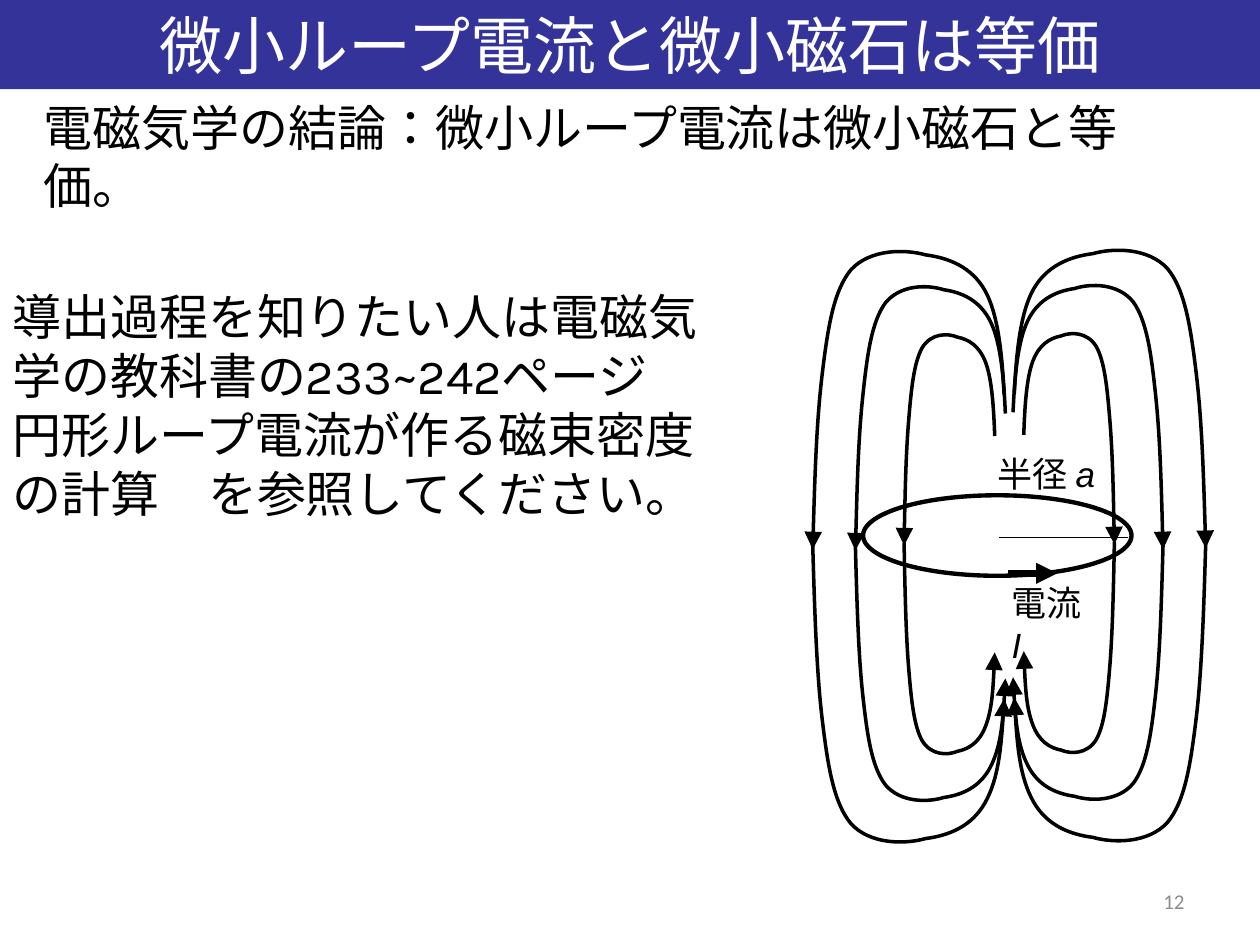
import pptx
import pptx.util
import pptx.dml.color
import pptx.enum.lang
import pptx.enum.shapes
import pptx.enum.text
import pptx.oxml.ns
from lxml import etree

Pt = pptx.util.Pt
qn = pptx.oxml.ns.qn
ALIGN = pptx.enum.text.PP_ALIGN
ANCHOR = pptx.enum.text.MSO_ANCHOR
SHAPE = pptx.enum.shapes.MSO_SHAPE

COLORS = {"ink": "000000", "title_bar": "333399", "title": "FFFFFF", "number": "8C8C8C"}
JAPANESE = {"language_id": pptx.enum.lang.MSO_LANGUAGE_ID.JAPANESE}
TITLE = {**JAPANESE, "size": Pt(36), "name": "Karla"}
BODY = {**JAPANESE, "size": Pt(28), "name": "Karla"}
LABEL = {**JAPANESE, "size": Pt(20), "name": "Arial"}
SYMBOL = {**LABEL, "italic": True}
NUMBER = {"size": Pt(12), "name": "Calibri"}

# Cubic Bezier points of one half loop, from the axis (0) outwards (1)
# and from the outer end of the lobe (0) to the loop plane (1).
HALF_LOOP = [
    (0, 0.48), (0.01, 0.35), (0.03, 0.21), (0.1, 0.13),
    (0.17, 0.05), (0.29, 0.02), (0.41, 0.01),
    (0.52, -0.01), (0.7, -0.01), (0.8, 0.06),
    (0.89, 0.13), (0.92, 0.25), (0.95, 0.41),
    (0.98, 0.57), (0.99, 0.78), (1, 1),
]
# Gap from the axis, width, then top and height of the upper and lower halves
FIELD_LOOPS = [
    (2.2, 85.7, (20.1, 150.5), (168.5, 144.7)),
    (8.3, 51.8, (47.5, 120.2), (166.3, 120.2)),
    (2.9, 109.4, (0, 169.9), (167, 169.9)),
]


def rgb(name):
    return pptx.dml.color.RGBColor.from_string(COLORS[name])


def write(sp, runs, color="ink", align=ALIGN.LEFT, anchor=ANCHOR.TOP):
    tf = sp.text_frame
    tf.word_wrap = True
    tf.vertical_anchor = anchor
    p = tf.paragraphs[0]
    p.alignment = align
    p._p.get_or_add_pPr().set("hangingPunct", "0")
    for text, style in runs:
        r = p.add_run()
        r.text = text
        r.font.color.rgb = rgb(color)
        for key, value in style.items():
            setattr(r.font, key, value)


def add_text(s, box, runs, **options):
    write(s.shapes.add_textbox(*map(Pt, box)), runs, **options)


def style_line(sp, width, arrow=None, size="med"):
    """Black line; arrow is headEnd or tailEnd."""
    sp.line.color.rgb = rgb("ink")
    sp.line.width = Pt(width)
    if arrow:
        ln = sp.line._get_or_add_ln()
        etree.SubElement(ln, qn("a:" + arrow), type="triangle", w=size, len=size)


def add_line(s, start, end, width, arrow=None):
    cn = s.shapes.add_connector(
        pptx.enum.shapes.MSO_CONNECTOR.STRAIGHT, *map(Pt, start + end))
    style_line(cn, width, arrow)
    etree.SubElement(cn._element.spPr, qn("a:effectLst"))


def bend(sp):
    """Turn each three straight segments into one cubic Bezier segment."""
    segments = list(sp._element.iter(qn("a:lnTo")))
    for i in range(0, len(segments), 3):
        curve = etree.Element(qn("a:cubicBezTo"))
        segments[i].addprevious(curve)
        for segment in segments[i:i + 3]:
            curve.append(segment[0])
            segment.getparent().remove(segment)


def add_half_loop(group, inner_x, width, far_y, height, arrow):
    """Signed width and height turn the half loop left or down."""
    pts = [(Pt(inner_x + width * x), Pt(far_y + height * y)) for x, y in HALF_LOOP]
    builder = group.shapes.build_freeform(*pts[0], scale=1.0)
    builder.add_line_segments(pts[1:], close=False)
    sp = builder.convert_to_shape()
    bend(sp)
    sp.shadow.inherit = False
    sp.fill.background()
    style_line(sp, 2, arrow, "lg")


def add_field(s, axis, top):
    for side, drop in ((1, 0), (-1, 0.7)):
        group = s.shapes.add_group_shape()
        y0 = top + drop
        for gap, width, (up_y, up_h), (low_y, low_h) in FIELD_LOOPS:
            x = axis + side * gap
            add_half_loop(group, x, side * width, y0 + up_y, up_h, "tailEnd")
            add_half_loop(group, x, side * width, y0 + low_y + low_h, -low_h, "headEnd")


def add_current_loop(s, left, top, width, height):
    sp = s.shapes.add_shape(SHAPE.OVAL, *map(Pt, (left, top, width, height)))
    sp.shadow.inherit = False
    sp.fill.background()
    style_line(sp, 2.5)
    add_line(s, (left + 82.8, top + 44.6), (left + 110.9, top + 44.6), 4, "tailEnd")
    add_line(s, (left + 77.8, top + 24), (left + 151.2, top + 24), 0.75)
    add_text(s, (left + 77.8, top + 46, 64, 31), [("電流 ", LABEL), ("I", SYMBOL)])
    add_text(s, (left + 69.8, top - 28, 70, 31), [("半径 ", LABEL), ("a", SYMBOL)])


def add_title(s, left, top, width, height):
    sp = s.shapes.add_shape(SHAPE.RECTANGLE, *map(Pt, (left, top, width, height)))
    sp.shadow.inherit = False
    sp.fill.solid()
    sp.fill.fore_color.rgb = rgb("title_bar")
    sp.line.fill.background()
    write(sp, [("微小ループ電流と微小磁石は等価", TITLE)], color="title",
          align=ALIGN.CENTER, anchor=ANCHOR.MIDDLE)


def main():
    prs = pptx.Presentation()
    prs.slide_width, prs.slide_height = Pt(720), Pt(540)
    s = prs.slides.add_slide(prs.slide_layouts[6])
    add_text(s, (516, 500.5, 168, 28.8), [("12", NUMBER)], color="number",
             align=ALIGN.RIGHT, anchor=ANCHOR.MIDDLE)
    add_title(s, 0, 0, 720, 51)
    add_text(s, (18, 52, 680.4, 41),
             [("電磁気学の結論：微小ループ電流は微小磁石と等価。", BODY)])
    add_current_loop(s, 493.2, 283, 153.4, 46)
    add_field(s, 576.7, 143.3)
    add_text(s, (0, 160.3, 426.2, 143.3),
             [("導出過程を知りたい人は電磁気学の教科書の233~242ページ　"
               "円形ループ電流が作る磁束密度の計算　を参照してください。", BODY)])
    prs.save("out.pptx")


if __name__ == "__main__":
    main()
